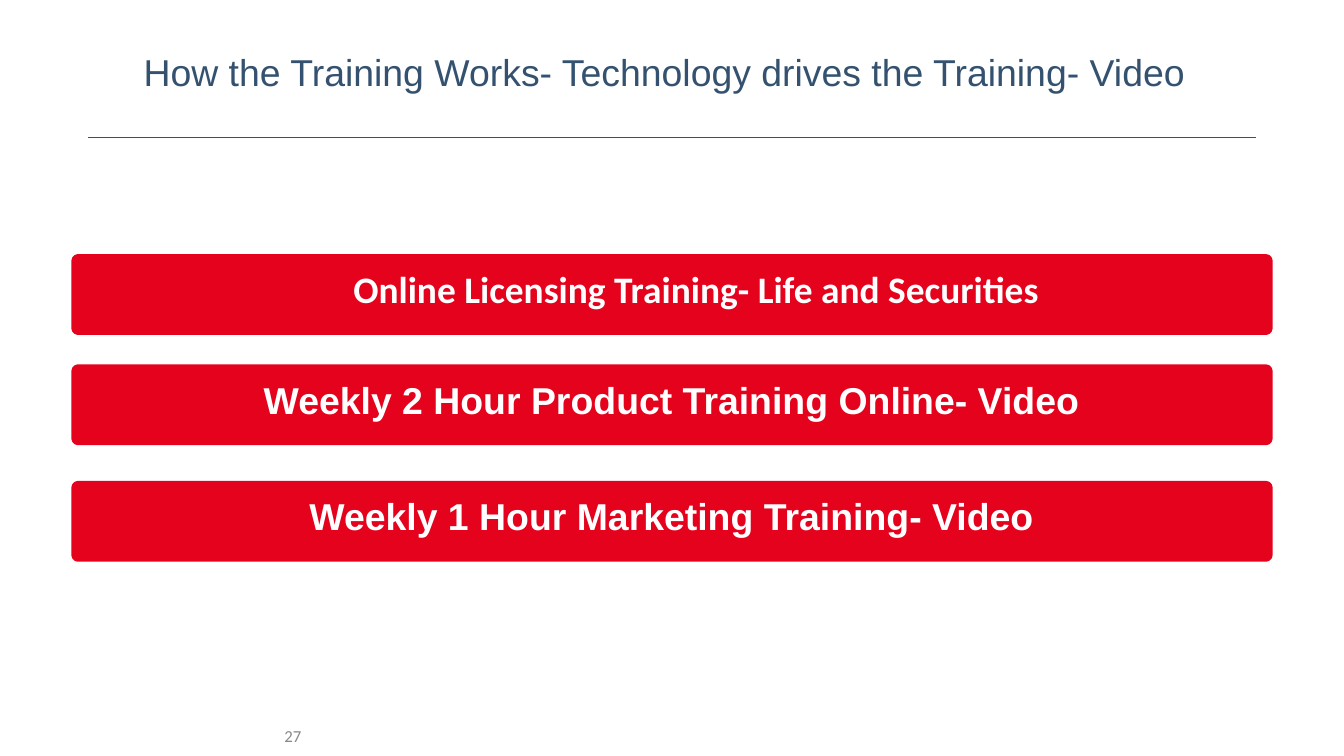
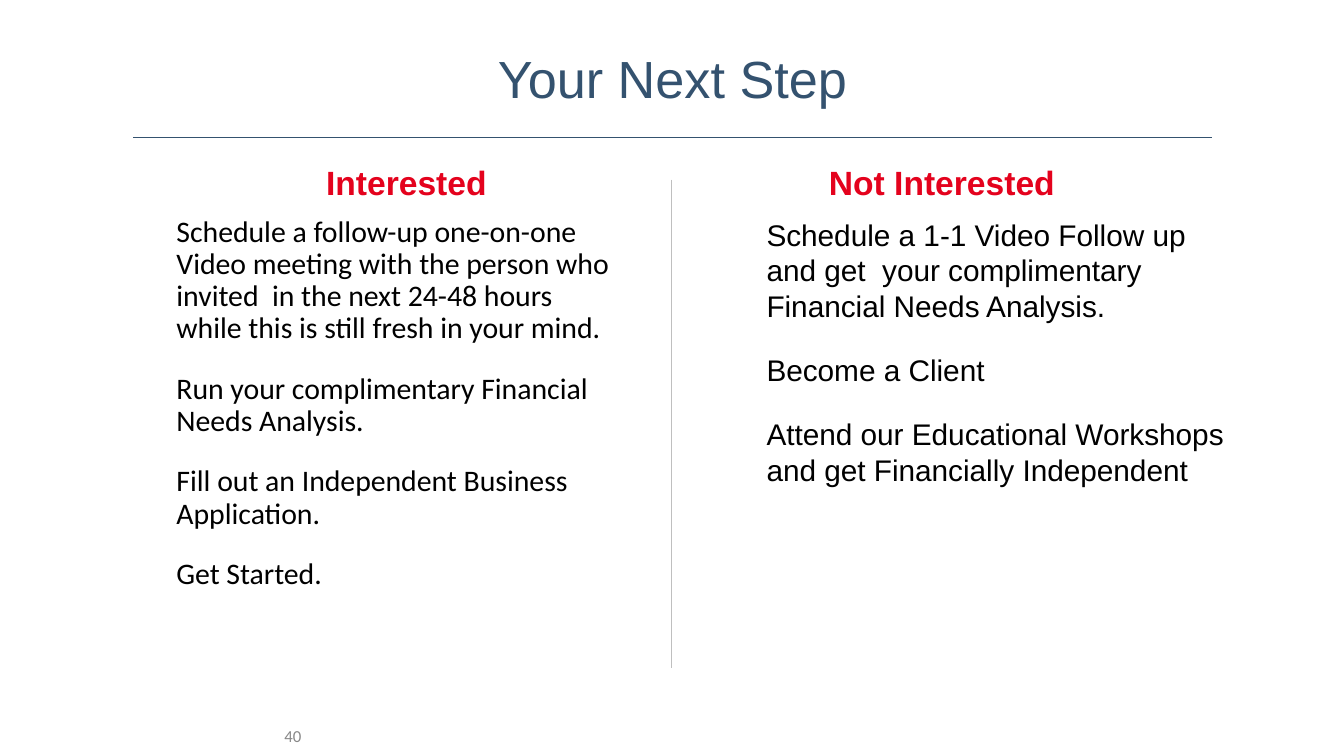
from lxml import etree
from pptx import Presentation
from pptx import util as u
from pptx.dml.color import RGBColor
from pptx.enum import shapes, text
from pptx.oxml.ns import qn

PX = 9525  # EMU in one px, 96 px to the inch
NAVY, RED, WHITE, BLACK = "34526F", "E4021D", "FFFFFF", "000000"
RULE_GREY, NUMBER_GREY = "BFBFBF", "888888"
SANS, HUMANIST = "Arial", "Calibri"
LEFT, CENTER, RIGHT = text.PP_ALIGN.LEFT, text.PP_ALIGN.CENTER, text.PP_ALIGN.RIGHT
BAR_LEFT, BAR_WIDTH, BAR_HEIGHT = 70, 1140, 73


def px(n):
    return u.Emu(n * PX)


def color(value):
    return RGBColor.from_string(value)


def place(sp, box):
    sp.left, sp.top, sp.width, sp.height = map(px, box)


def write(sp, box, paras, size, font, fill, bold=False, align=LEFT,
          spacing=1.0, gap=0, anchor=text.MSO_ANCHOR.TOP):
    """Place a text shape and fill it with unbulleted paragraphs, gap points apart."""
    place(sp, box)
    tf = sp.text_frame
    tf.word_wrap = True
    tf.auto_size = text.MSO_AUTO_SIZE.NONE
    tf.vertical_anchor = anchor
    tf.margin_left = tf.margin_right = px(12)
    tf.margin_top = tf.margin_bottom = px(7)
    for i, words in enumerate(paras):
        p = tf.add_paragraph() if i else tf.paragraphs[0]
        pPr = p._p.get_or_add_pPr()
        pPr.set("marL", "0")
        pPr.set("indent", "0")
        etree.SubElement(pPr, qn("a:buNone"))
        p.alignment = align
        p.line_spacing = spacing
        p.space_before = u.Pt(gap if i else 0)
        p.space_after = u.Pt(0)
        r = p.add_run()
        r.text = words
        r.font.name = font
        r.font.size = u.Pt(size)
        r.font.bold = bold
        r.font.color.rgb = color(fill)


def add_text(slide, box, paras, *args, **kwargs):
    sp = slide.shapes.add_textbox(0, 0, 0, 0)
    write(sp, box, paras, *args, **kwargs)


def add_rule(slide, x1, y1, x2, y2, fill):
    line = slide.shapes.add_connector(
        shapes.MSO_CONNECTOR.STRAIGHT, px(x1), px(y1), px(x2), px(y2))
    line.line.color.rgb = color(fill)
    line.line.width = u.Pt(0.75)
    etree.SubElement(line._element.spPr, qn("a:effectLst"))


def add_bar(slide, top):
    sp = slide.shapes.add_shape(shapes.MSO_SHAPE.ROUNDED_RECTANGLE, 0, 0, 0, 0)
    place(sp, (BAR_LEFT, top, BAR_WIDTH, BAR_HEIGHT))
    sp.adjustments[0] = 0.06
    sp.shadow.inherit = False
    sp.fill.solid()
    sp.fill.fore_color.rgb = color(RED)
    sp.line.color.rgb = color(RED)
    sp.line.width = u.Pt(3)


def start_slide(prs, layout, title, left, width, size, rule, number):
    """Add a slide with its title, the rule below it and the page number."""
    slide = prs.slides.add_slide(prs.slide_layouts.get_by_name(layout))
    write(slide.shapes.title, (left, 46, width, 71), [title], size, SANS, NAVY,
          align=CENTER, spacing=0.85)
    add_rule(slide, rule[0], 131, rule[1], 131, NAVY)
    add_text(slide, (0, 682, 299, 38), [number], 12, HUMANIST, NUMBER_GREY,
             align=RIGHT, anchor=text.MSO_ANCHOR.MIDDLE)
    return slide


def build_training(prs):
    slide = start_slide(
        prs, "Title and Content",
        "How the Training Works- Technology drives the Training- Video",
        36, 1195, 26.7, (84, 1196), "27")
    for top in (244, 349, 460):
        add_bar(slide, top)
    body = slide.placeholders[1]
    slide.shapes._spTree.append(body._element)  # in front of the bars
    style = dict(size=26.7, fill=WHITE, bold=True, align=CENTER)
    write(body, (101, 251, 1125, 53),
          ["Online Licensing Training- Life and Securities"],
          font=HUMANIST, spacing=0.9, **style)
    add_text(slide, (70, 352, 1140, 77),
             ["Weekly 2 Hour Product Training Online- Video"], font=SANS, **style)
    add_text(slide, (84, 463, 1112, 64),
             ["Weekly 1 Hour Marketing Training- Video"], font=SANS, **style)


def build_next_step(prs):
    slide = start_slide(prs, "Comparison", "Your Next Step",
                        101, 1079, 37.3, (127, 1154), "40")
    holders = slide.placeholders
    for idx, left, heading in ((1, 130, "Interested"), (3, 640, "Not Interested")):
        write(holders[idx], (left, 147, 514, 52), [heading], 24, SANS, RED,
              bold=True, align=CENTER)
    write(holders[2], (156, 199, 446, 479), [
        "Schedule a follow-up one-on-one Video meeting with the person who "
        "invited  in the next 24-48 hours while this is still fresh in your mind.",
        "Run your complimentary Financial Needs Analysis.",
        "Fill out an Independent Business Application.",
        "Get Started.",
    ], 21.3, HUMANIST, BLACK, spacing=0.9, gap=20.3)
    write(holders[4], (718, 199, 461, 457), [
        "Schedule a 1-1 Video Follow up and get  your complimentary "
        "Financial Needs Analysis.",
        "Become a Client",
        "Attend our Educational Workshops and get Financially Independent",
    ], 21.3, SANS, BLACK, gap=20.3)
    add_rule(slide, 640, 171, 640, 636, RULE_GREY)


def main():
    prs = Presentation()
    prs.slide_width, prs.slide_height = px(1280), px(720)
    build_training(prs)
    build_next_step(prs)
    prs.save("out.pptx")


if __name__ == "__main__":
    main()
